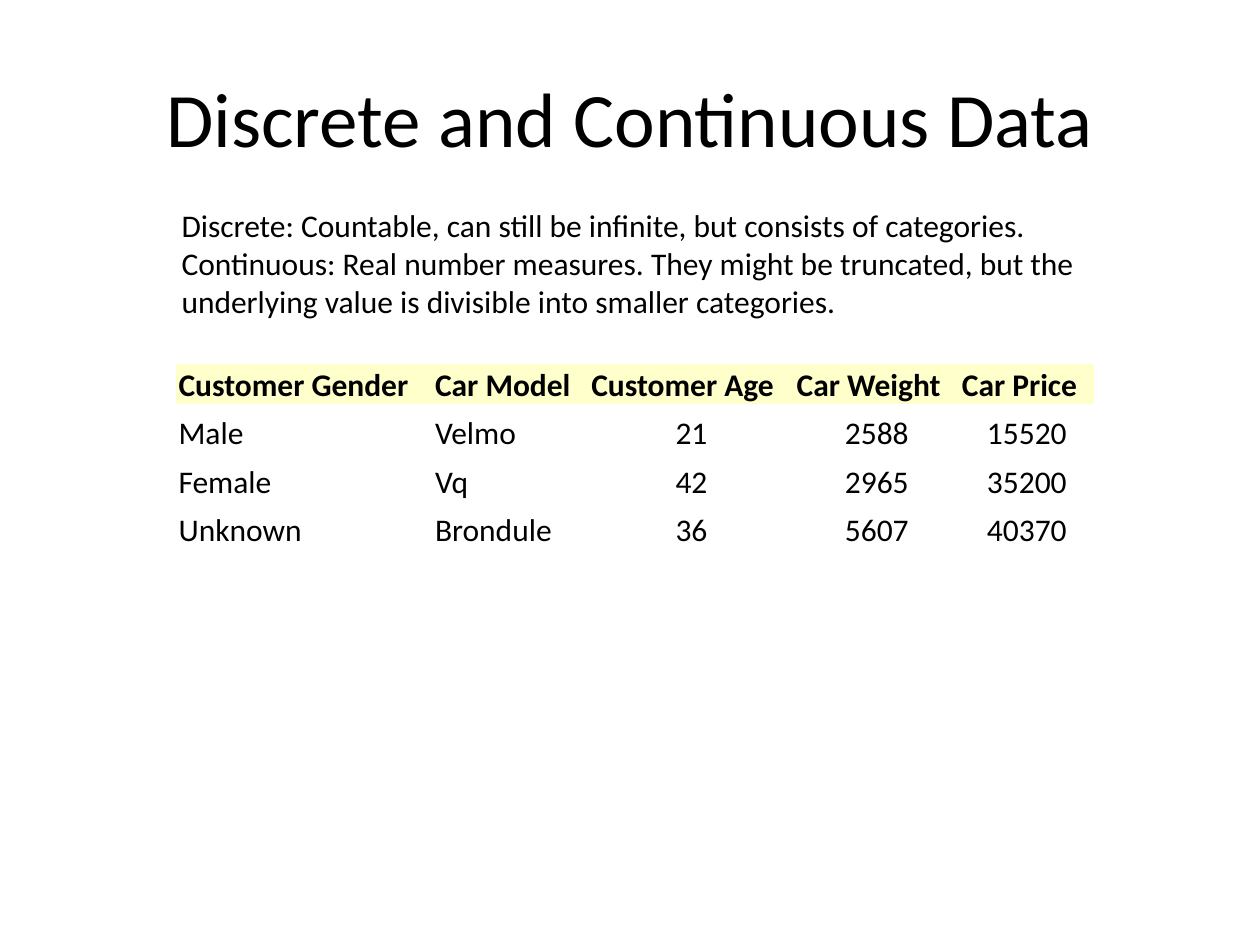
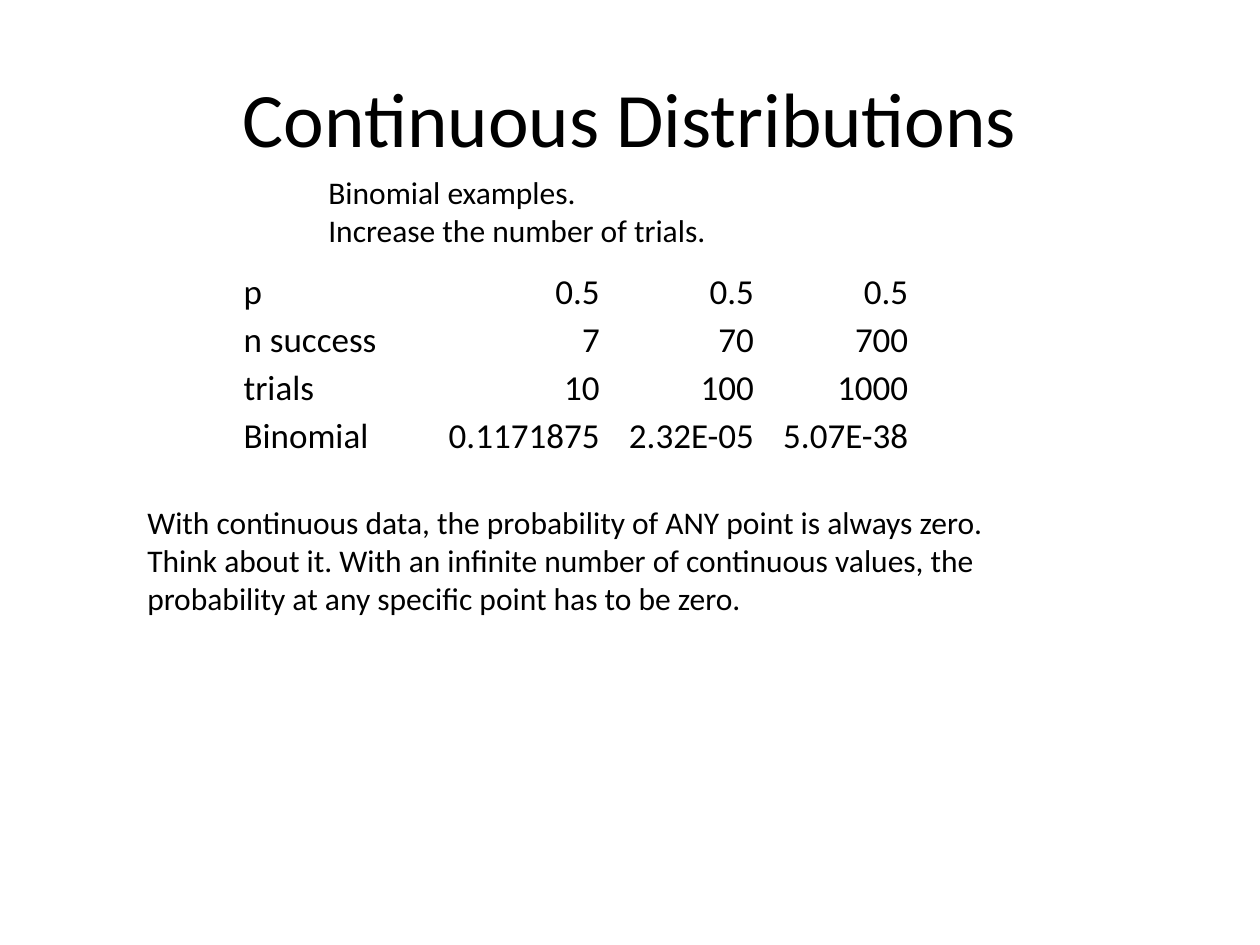
from dataclasses import dataclass

from pptx import Presentation
from pptx.dml.color import RGBColor
from pptx.enum.text import MSO_ANCHOR, MSO_AUTO_SIZE, PP_ALIGN
from pptx.oxml.ns import qn
from pptx.slide import Slide
from pptx.util import Cm, Pt

# Shared look
BLACK = RGBColor(0x00, 0x00, 0x00)
HEADER_YELLOW = RGBColor(0xFF, 0xFF, 0xCC)
FONT = "Calibri"
TITLE_SIZE, TEXT_SIZE = 44, 18
TITLE_ONLY = 5
NO_TABLE_STYLE = "{2D5ABB26-0587-4C30-8999-92F81FD0307C}"

LEFT, CENTER, RIGHT = PP_ALIGN.LEFT, PP_ALIGN.CENTER, PP_ALIGN.RIGHT
MIDDLE, BOTTOM = MSO_ANCHOR.MIDDLE, MSO_ANCHOR.BOTTOM
FIT_SHAPE = MSO_AUTO_SIZE.SHAPE_TO_FIT_TEXT


@dataclass
class Note:
    """A text box; lengths in centimetres."""
    left: float
    top: float
    width: float
    height: float
    lines: list[str]
    wrap: bool = True


@dataclass
class Grid:
    """A plain table; lengths in centimetres."""
    left: float
    top: float
    col_widths: list[float]
    row_heights: list[float]
    rows: list[list[str]]
    label_cols: int
    value_align: PP_ALIGN
    size: int
    inset: float = 0
    has_header: bool = False


def style_paragraph(p, size: int, align: PP_ALIGN = LEFT, bold: bool = False) -> None:
    p.alignment = align
    p.font.name, p.font.size, p.font.bold = FONT, Pt(size), bold
    p.font.color.rgb = BLACK


def add_titled_slide(prs, title: str) -> Slide:
    s = prs.slides.add_slide(prs.slide_layouts[TITLE_ONLY])
    sp = s.shapes.title
    sp.left, sp.top, sp.width, sp.height = Cm(1.27), Cm(0.76), Cm(22.86), Cm(3.18)
    sp.text_frame.text = title
    sp.text_frame.vertical_anchor = MIDDLE
    style_paragraph(sp.text_frame.paragraphs[0], TITLE_SIZE, CENTER)
    return s


def add_note(s: Slide, note: Note) -> None:
    sp = s.shapes.add_textbox(Cm(note.left), Cm(note.top), Cm(note.width), Cm(note.height))
    tf = sp.text_frame
    tf.word_wrap = note.wrap
    tf.auto_size = FIT_SHAPE
    tf.text = "\n".join(note.lines)
    for p in tf.paragraphs:
        style_paragraph(p, TEXT_SIZE)


def add_grid(s: Slide, grid: Grid) -> None:
    frame = s.shapes.add_table(
        len(grid.rows), len(grid.col_widths), Cm(grid.left), Cm(grid.top),
        Cm(sum(grid.col_widths)), Cm(sum(grid.row_heights)))
    table = frame.table
    table.first_row = grid.has_header
    table.horz_banding = False
    table._tbl.tblPr.find(qn("a:tableStyleId")).text = NO_TABLE_STYLE
    for column, width in zip(table.columns, grid.col_widths):
        column.width = Cm(width)
    for row, height in zip(table.rows, grid.row_heights):
        row.height = Cm(height)

    for i, values in enumerate(grid.rows):
        is_header = grid.has_header and i == 0
        for j, value in enumerate(values):
            cell = table.cell(i, j)
            cell.text = value
            cell.vertical_anchor = BOTTOM
            cell.margin_left = cell.margin_right = cell.margin_top = Cm(grid.inset)
            cell.margin_bottom = 0
            if is_header:
                cell.fill.solid()
                cell.fill.fore_color.rgb = HEADER_YELLOW
            else:
                cell.fill.background()
            align = LEFT if is_header or j < grid.label_cols else grid.value_align
            style_paragraph(cell.text_frame.paragraphs[0], grid.size, align, is_header)


def build_data_types(prs) -> None:
    s = add_titled_slide(prs, "Discrete and Continuous Data")
    add_note(s, Note(3.41, 4.03, 18.54, 2.57, [
        "Discrete: Countable, can still be infinite, but consists of categories.",
        "Continuous: Real number measures. They might be truncated, but the "
        "underlying value is divisible into smaller categories.",
    ]))
    add_grid(s, Grid(
        3.55, 7.34, [5.17, 3.15, 4.14, 3.33, 2.72], [0.51] + [0.98] * 3,
        [
            ["Customer Gender", "Car Model", "Customer Age", "Car Weight", "Car Price"],
            ["Male", "Velmo", "21", "2588", "15520"],
            ["Female", "Vq", "42", "2965", "35200"],
            ["Unknown", "Brondule", "36", "5607", "40370"],
        ],
        label_cols=2, value_align=CENTER, size=18, inset=0.05, has_header=True))


def build_distributions(prs) -> None:
    s = add_titled_slide(prs, "Continuous Distributions")
    add_note(s, Note(6.37, 3.37, 8.2, 1.8, [
        "Binomial examples.",
        "Increase the number of trials.",
    ], wrap=False))
    add_note(s, Note(2.72, 10.02, 18.08, 2.57, [
        "With continuous data, the probability of ANY point is always zero.",
        "Think about it. With an infinite number of continuous values, the "
        "probability at any specific point has to be zero.",
    ]))
    add_grid(s, Grid(
        4.91, 5.35, [3.11, 4.07, 3.11, 3.11], [0.97] * 4,
        [
            ["p", "0.5", "0.5", "0.5"],
            ["n success", "7", "70", "700"],
            ["trials", "10", "100", "1000"],
            ["Binomial", "0.1171875", "2.32E-05", "5.07E-38"],
        ],
        label_cols=1, value_align=RIGHT, size=20))


def main() -> None:
    prs = Presentation()
    prs.slide_width, prs.slide_height = Cm(25.4), Cm(19.05)
    build_data_types(prs)
    build_distributions(prs)
    prs.save("out.pptx")


if __name__ == "__main__":
    main()
